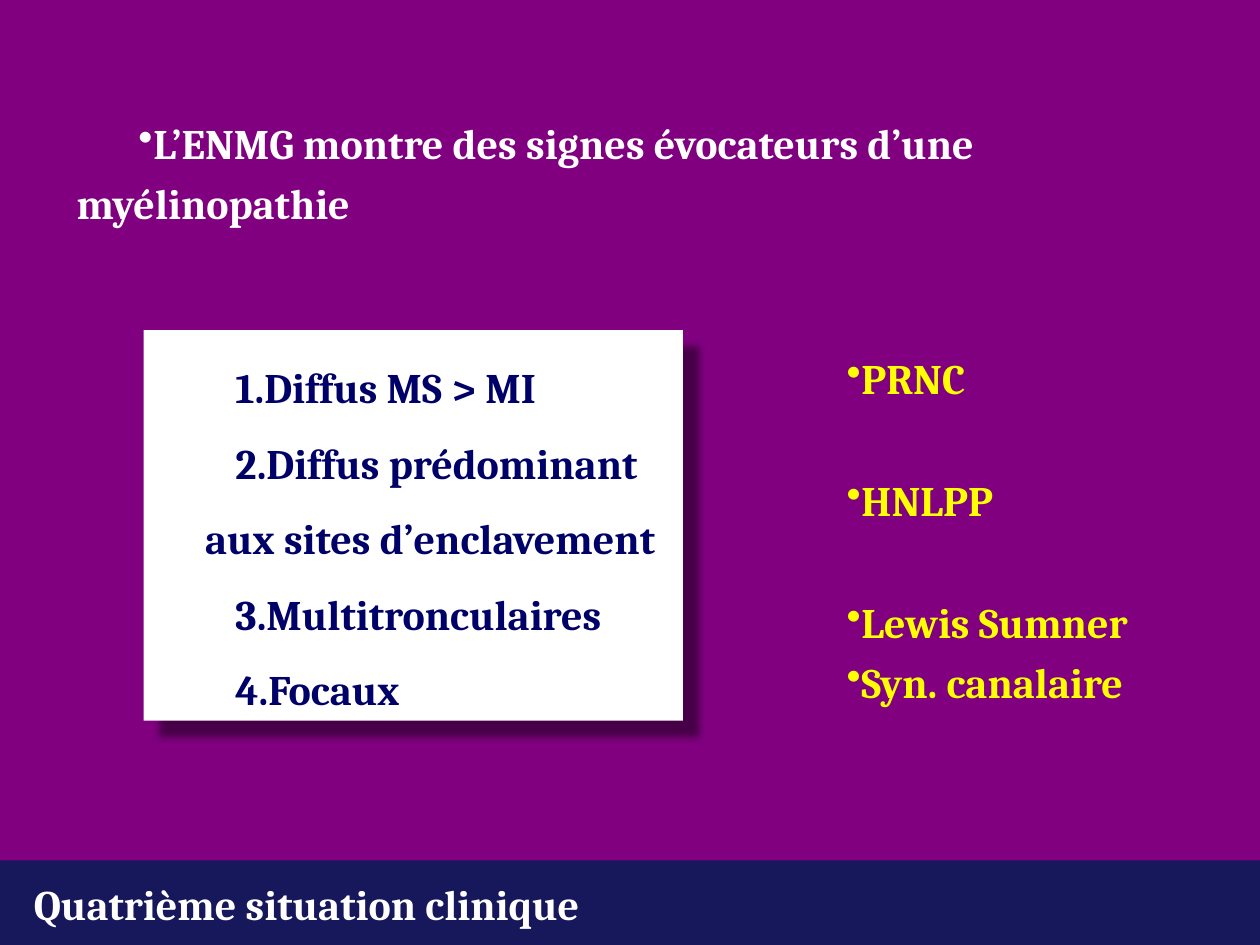
from lxml.etree import SubElement
from pptx import Presentation
from pptx.dml.color import RGBColor
from pptx.enum.shapes import MSO_SHAPE
from pptx.enum.text import MSO_ANCHOR, PP_ALIGN
from pptx.oxml.ns import qn
from pptx.util import Inches, Pt

COLORS = {
    "navy": "17175C",
    "purple": "800080",
    "white": "FFFFFF",
    "ink": "000069",
    "yellow": "FFFF00",
    "black": "000000",
}
BULLET = ("buChar", {"char": "•"})
NUMBER = ("buAutoNum", {"type": "arabicPeriod"})


class SlideBuilder:
    """Draws styled elements on one slide, placed on a grid of 100 columns by 75 rows."""

    font_name = "Cambria"
    font_size = Pt(24)
    left_margin = Inches(0.24)

    def __init__(self, presentation):
        self.slide = presentation.slides.add_slide(presentation.slide_layouts[6])
        self.column = presentation.slide_width / 100
        self.row = presentation.slide_height / 75

    def color(self, name):
        return RGBColor.from_string(COLORS[name])

    def place(self, left, top, width, height):
        return (round(left * self.column), round(top * self.row),
                round(width * self.column), round(height * self.row))

    def background(self, color):
        fill = self.slide.background.fill
        fill.solid()
        fill.fore_color.rgb = self.color(color)

    def panel(self, area, color):
        shape = self.slide.shapes.add_shape(MSO_SHAPE.RECTANGLE, *self.place(*area))
        shape.shadow.inherit = False
        shape.fill.solid()
        shape.fill.fore_color.rgb = self.color(color)
        shape.line.fill.background()
        return shape

    def cast_shadow(self, shape, color):
        effects = shape._element.spPr.find(qn("a:effectLst"))
        shadow = SubElement(effects, qn("a:outerShdw"), blurRad=str(Pt(4)),
                            dist=str(Pt(13)), dir="2700000", algn="tl", rotWithShape="0")
        tint = SubElement(shadow, qn("a:srgbClr"), val=COLORS[color])
        SubElement(tint, qn("a:alpha"), val="43000")

    def text_box(self, area):
        return self.slide.shapes.add_textbox(*self.place(*area))

    def mark(self, paragraph, marker, indent, tab):
        properties = paragraph._p.get_or_add_pPr()
        properties.set("marL", str(self.left_margin))
        properties.set("indent", str(Inches(indent)))
        tag, attributes = marker
        SubElement(properties, qn(f"a:{tag}"), **attributes)
        if tab:
            tabs = SubElement(properties, qn("a:tabLst"))
            SubElement(tabs, qn("a:tab"), pos=str(Inches(tab)), algn="l")

    def add_text(self, shape, items, color, marker=None, indent=0, spacing=1.0, tab=None, gaps=()):
        frame = shape.text_frame
        frame.word_wrap = True
        frame.vertical_anchor = MSO_ANCHOR.TOP
        for index, item in enumerate(items):
            paragraph = frame.add_paragraph() if index else frame.paragraphs[0]
            paragraph.alignment = PP_ALIGN.LEFT
            if marker:
                self.mark(paragraph, marker, indent, tab)
            paragraph.line_spacing = spacing
            if item in gaps:
                paragraph.space_after = Pt(35)
            for number, line in enumerate(item.split("\n")):
                if number:
                    paragraph.add_line_break()
                run = paragraph.add_run()
                run.text = line
                run.font.name = self.font_name
                run.font.size = self.font_size
                run.font.bold = True
                run.font.color.rgb = self.color(color)


def main():
    presentation = Presentation()
    presentation.slide_width = Inches(10)
    presentation.slide_height = Inches(7.5)
    builder = SlideBuilder(presentation)
    builder.background("navy")
    builder.panel((0, 0, 100, 68.3), "purple")

    footer = builder.text_box((1.7, 69.2, 49.2, 5))
    builder.add_text(footer, ["Quatrième situation clinique"], "white")

    finding = builder.text_box((2.7, 8, 97.3, 10.6))
    builder.add_text(finding, ["L’ENMG montre des signes évocateurs d’une myélinopathie"],
                     "white", BULLET, indent=0.49, spacing=1.2)

    patterns = builder.panel((11.4, 26.2, 42.8, 31), "white")
    builder.cast_shadow(patterns, "black")
    builder.add_text(patterns,
                     ["Diffus MS > MI", "Diffus prédominant\n\taux sites d’enclavement",
                      "Multitronculaires", "Focaux"],
                     "ink", NUMBER, indent=0.39, spacing=1.5, tab=0.39)

    diagnoses = builder.text_box((58.9, 26.7, 64.9, 34.9))
    builder.add_text(diagnoses, ["PRNC", "HNLPP", "Lewis Sumner", "Syn. canalaire"],
                     "yellow", BULLET, indent=0.49, spacing=1.2, gaps=("PRNC", "HNLPP"))

    presentation.save("out.pptx")


if __name__ == "__main__":
    main()
